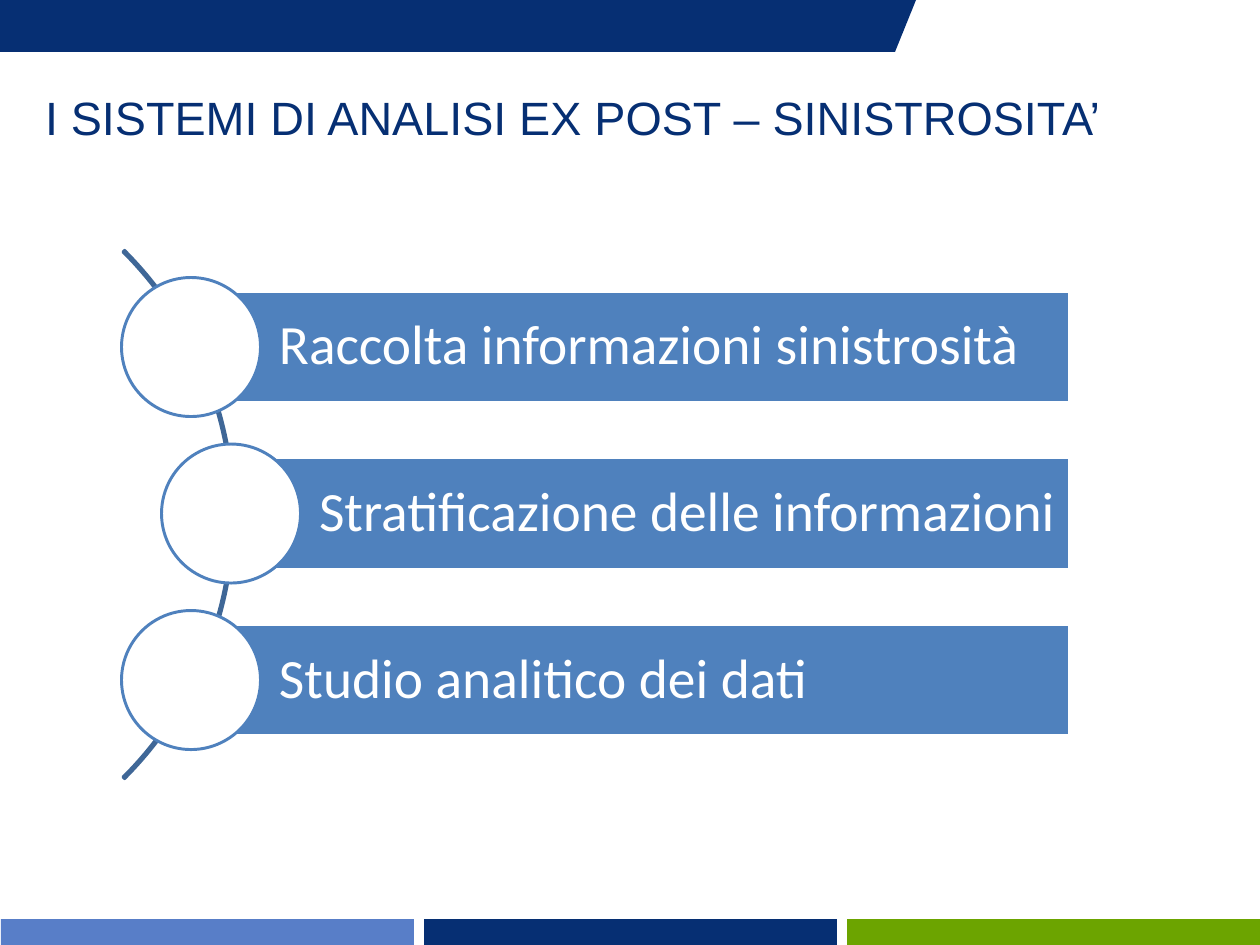
from dataclasses import dataclass

from pptx import Presentation
from pptx import util as u
from pptx.dml.color import RGBColor
from pptx.enum import shapes, text

PX = 8709  # EMU per px, at 105 px to the inch

NAVY = RGBColor(0x06, 0x2F, 0x73)
LIGHT_BLUE = RGBColor(0x58, 0x7E, 0xC8)
GREEN = RGBColor(0x6C, 0xA4, 0x00)
STEEL = RGBColor(0x4F, 0x81, 0xBD)
ARC_BLUE = RGBColor(0x3F, 0x67, 0x97)
WHITE = RGBColor(0xFF, 0xFF, 0xFF)

BAR_RIGHT, BAR_HEIGHT = 1069, 111
CIRCLE = 139
FIRST_Y, STEP_PITCH = 347, 166.5


@dataclass
class Step:
    label: str
    center_x: int


STEPS = [
    Step("Raccolta informazioni sinistrosità", 191),
    Step("Stratificazione delle informazioni", 231),
    Step("Studio analitico dei dati", 191),
]


def px(n: float) -> int:
    return round(n * PX)


def style(sp, fill: RGBColor | None, line: RGBColor | None) -> None:
    sp.shadow.inherit = False
    if fill is None:
        sp.fill.background()
    else:
        sp.fill.solid()
        sp.fill.fore_color.rgb = fill
    if line is None:
        sp.line.fill.background()
    else:
        sp.line.color.rgb = line
        sp.line.width = u.Pt(2)


def add_shape(slide, kind, left: float, top: float, width: float, height: float,
              fill: RGBColor | None, line: RGBColor | None = None):
    sp = slide.shapes.add_shape(kind, px(left), px(top), px(width), px(height))
    style(sp, fill, line)
    return sp


def write(sp, words: str, font: str, size: int, color: RGBColor,
          left_inset: int, inset: int, anchor) -> None:
    tf = sp.text_frame
    tf.text = words
    tf.word_wrap = True
    tf.auto_size = text.MSO_AUTO_SIZE.NONE
    tf.vertical_anchor = anchor
    tf.margin_left = px(left_inset)
    tf.margin_top = tf.margin_right = tf.margin_bottom = px(inset)
    p = tf.paragraphs[0]
    p.alignment = text.PP_ALIGN.LEFT
    r = p.runs[0]
    r.font.name = font
    r.font.size = u.Pt(size)
    r.font.color.rgb = color


def add_step(slide, step: Step, center_y: float) -> None:
    bar = add_shape(slide, shapes.MSO_SHAPE.RECTANGLE, step.center_x,
                    center_y - BAR_HEIGHT / 2, BAR_RIGHT - step.center_x,
                    BAR_HEIGHT, STEEL, WHITE)
    write(bar, step.label, "Calibri", 38, WHITE, 88, 11, text.MSO_ANCHOR.MIDDLE)
    bar.text_frame.paragraphs[0].line_spacing = 0.9
    add_shape(slide, shapes.MSO_SHAPE.OVAL, step.center_x - CIRCLE / 2,
              center_y - CIRCLE / 2, CIRCLE, CIRCLE, WHITE, STEEL)


def main() -> None:
    prs = Presentation()
    prs.slide_width, prs.slide_height = u.Inches(12), u.Inches(9)
    slide = prs.slides.add_slide(prs.slide_layouts[5])

    # Footer tiles
    for i, color in enumerate((LIGHT_BLUE, NAVY, GREEN)):
        add_shape(slide, shapes.MSO_SHAPE.RECTANGLE, 1 + 423 * i, 919, 413, 26, color)

    # Header band with a slanted end
    band = slide.shapes.build_freeform(0, 0, scale=PX)
    band.add_line_segments([(916, 0), (895, 52), (0, 52)], close=True)
    style(band.convert_to_shape(), NAVY, None)

    # Title
    title = slide.shapes.title
    title.left, title.top, title.width, title.height = px(35), px(79), px(1155), px(63)
    write(title, "I SISTEMI DI ANALISI EX POST – SINISTROSITA’", "Arial", 32,
          NAVY, 10, 10, text.MSO_ANCHOR.TOP)

    # Arc behind the steps
    arc = add_shape(slide, shapes.MSO_SHAPE.BLOCK_ARC, -513, 141, 747, 747, None, ARC_BLUE)
    for i, value in enumerate((189, 27, 0.003)):
        arc.adjustments[i] = value

    # Steps
    for i, step in enumerate(STEPS):
        add_step(slide, step, FIRST_Y + STEP_PITCH * i)

    prs.save("out.pptx")


if __name__ == "__main__":
    main()
